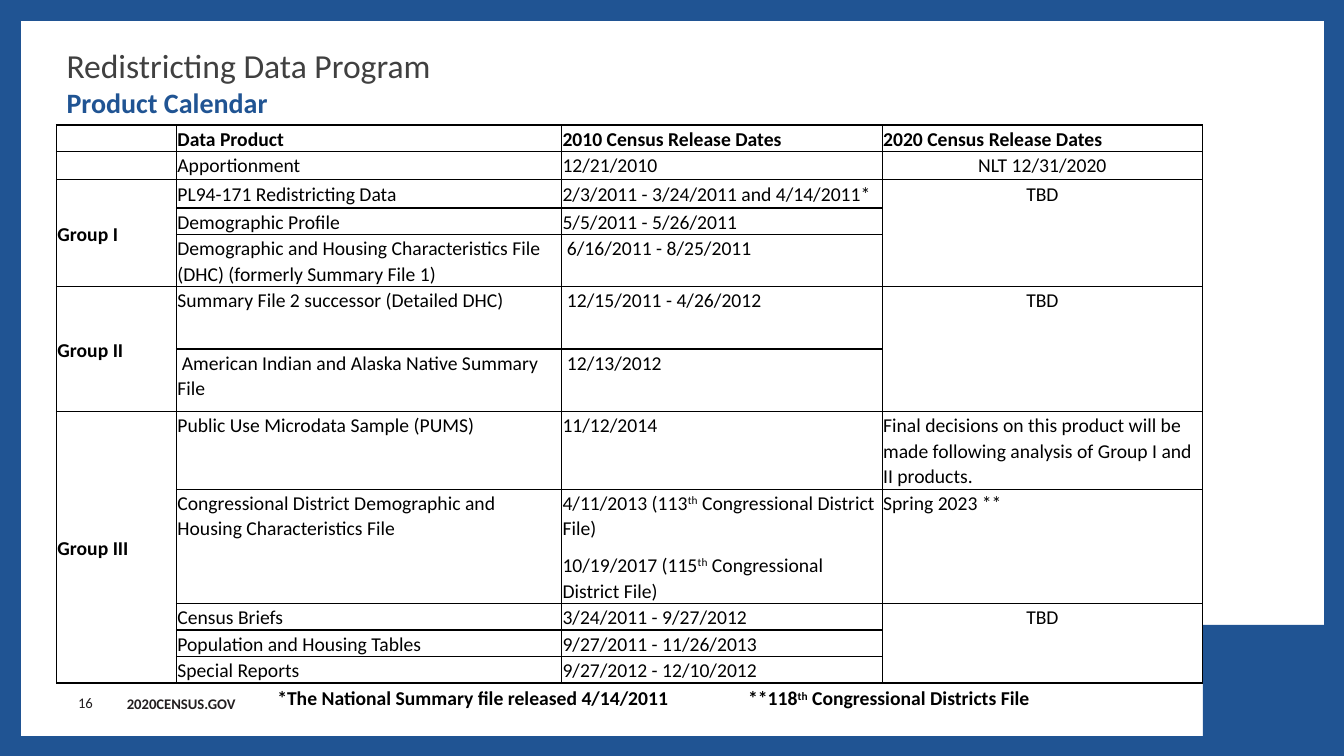
from typing import NamedTuple, Optional

from lxml.etree import SubElement
from pptx import Presentation
from pptx.dml.color import RGBColor
from pptx.enum.shapes import MSO_SHAPE
from pptx.enum.text import MSO_ANCHOR as ANCHOR, MSO_AUTO_SIZE as AUTO, PP_ALIGN as ALIGN
from pptx.oxml.ns import qn
from pptx.util import Inches, Pt

BLUE = RGBColor(0x20, 0x54, 0x93)
WHITE = RGBColor(0xFF, 0xFF, 0xFF)
BLACK = RGBColor(0, 0, 0)
GRAY = RGBColor(0x40, 0x40, 0x40)
INK = RGBColor(0x23, 0x1F, 0x20)
FONT = "Calibri"


class Block(NamedTuple):
    left: float
    top: float
    width: float
    height: float
    color: RGBColor


class Label(NamedTuple):
    text: str
    left: float
    top: float
    width: float
    height: float
    size: float
    color: RGBColor
    bold: bool = False
    wrap: bool = True
    align: ALIGN = ALIGN.LEFT
    anchor: ANCHOR = ANCHOR.TOP
    inset_left: float = 0.1
    inset_top: float = 0.05
    tab: float = 0


class Row(NamedTuple):
    """A table row; None continues the cell above."""
    height: float
    group: Optional[str]
    product: str
    dates_2010: str
    dates_2020: Optional[str]


BLOCKS = [Block(0.21, 0.21, 12.92, 7.09, WHITE), Block(11.93, 6.2, 1.4, 1.3, BLUE)]

# Text between carets is superscript
LABELS = [
    Label("2020CENSUS.GOV", 1.16, 6.84, 1.31, 0.28, 10.5, INK, bold=True, wrap=False),
    Label("16", 0.35, 6.77, 0.67, 0.4, 10.5, INK, align=ALIGN.RIGHT, anchor=ANCHOR.MIDDLE),
    Label("*The National Summary file released 4/14/2011\t**118^th^ Congressional Districts File",
          2.59, 6.71, 7.92, 0.4, 14, BLACK, bold=True, inset_left=0.16, inset_top=0.1, tab=4.67),
]

COLUMNS = [1.19, 3.82, 3.18, 3.18]
ROWS = [
    Row(0.24, "", "Data Product", "2010 Census Release Dates", "2020 Census Release Dates"),
    Row(0.28, "", "Apportionment", "12/21/2010", "NLT 12/31/2020"),
    Row(0.28, "Group I", "PL94-171 Redistricting Data",
        "2/3/2011 - 3/24/2011 and 4/14/2011*", "TBD"),
    Row(0.24, None, "Demographic Profile", "5/5/2011 - 5/26/2011", None),
    Row(0.47, None,
        "Demographic and Housing Characteristics File (DHC) (formerly Summary File 1)",
        " 6/16/2011 - 8/25/2011", None),
    Row(0.62, "Group II", "Summary File 2 successor (Detailed DHC)",
        " 12/15/2011 - 4/26/2012", "TBD"),
    Row(0.62, None, " American Indian and Alaska Native Summary File", " 12/13/2012", None),
    Row(0.7, "Group III", "Public Use Microdata Sample (PUMS)", "11/12/2014",
        "Final decisions on this product will be made following analysis of "
        "Group I and II products."),
    Row(1.04, None, "Congressional District Demographic and Housing Characteristics File",
        "4/11/2013 (113^th^ Congressional District File)\n"
        "10/19/2017 (115^th^ Congressional District File)", "Spring 2023 **"),
    Row(0.24, None, "Census Briefs", "3/24/2011 - 9/27/2012", "TBD"),
    Row(0.24, None, "Population and Housing Tables", "9/27/2011 - 11/26/2013", None),
    Row(0.24, None, "Special Reports", "9/27/2012 - 12/10/2012", None),
]


def set_attrs(target, **values) -> None:
    for name, value in values.items():
        setattr(target, name, value)


def add_run(p, text: str, size: float, color: RGBColor, bold: bool = False):
    r = p.add_run()
    r.text = text
    set_attrs(r.font, name=FONT, size=Pt(size), bold=bold)
    r.font.color.rgb = color
    return r


def add_runs(p, text: str, size: float, color: RGBColor, bold: bool = False) -> None:
    for i, part in enumerate(text.split("^")):
        r = add_run(p, part, size, color, bold)
        if i % 2:
            r._r.get_or_add_rPr().set("baseline", "30000")


def add_block(s, block: Block) -> None:
    box = map(Inches, block[:4])
    sp = s.shapes.add_shape(MSO_SHAPE.RECTANGLE, *box)
    sp.shadow.inherit = False
    sp.fill.solid()
    sp.fill.fore_color.rgb = block.color
    sp.line.fill.background()


def add_label(s, label: Label) -> None:
    box = map(Inches, label[1:5])
    tf = s.shapes.add_textbox(*box).text_frame
    set_attrs(tf, word_wrap=label.wrap, vertical_anchor=label.anchor,
              margin_left=Inches(label.inset_left), margin_top=Inches(label.inset_top))
    p = tf.paragraphs[0]
    p.alignment = label.align
    if label.tab:
        tabs = SubElement(p._p.get_or_add_pPr(), qn("a:tabLst"))
        SubElement(tabs, qn("a:tab"), pos=str(Inches(label.tab)), algn="l")
    add_runs(p, label.text, label.size, label.color, label.bold)


def format_cell(cell) -> None:
    set_attrs(cell, margin_left=Inches(0.01), margin_right=Inches(0.01),
              margin_top=Inches(0.01), margin_bottom=0)
    for side in ("lnL", "lnR", "lnT", "lnB"):
        ln = SubElement(cell._tc.get_or_add_tcPr(), qn(f"a:{side}"), w=str(Pt(1)))
        fill = SubElement(ln, qn("a:solidFill"))
        SubElement(fill, qn("a:srgbClr"), val=str(BLACK))
    cell.fill.solid()
    cell.fill.fore_color.rgb = WHITE


def fill_cell(cell, text: str, bold: bool, align: ALIGN) -> None:
    tf = cell.text_frame
    for i, line in enumerate(text.split("\n")):
        p = tf.add_paragraph() if i else tf.paragraphs[0]
        set_attrs(p, alignment=align, line_spacing=1.07, space_after=Pt(8))
        if line:
            add_runs(p, line, 14, BLACK, bold)
        else:
            SubElement(p._p, qn("a:endParaRPr"), sz="1400")


def add_calendar(s) -> None:
    frame = s.shapes.add_table(len(ROWS), len(COLUMNS), Inches(0.56), Inches(1.24),
                               Inches(sum(COLUMNS)), Inches(sum(r.height for r in ROWS)))
    table = frame.table
    set_attrs(table, first_row=False, horz_banding=False)
    for column, width in zip(table.columns, COLUMNS):
        column.width = Inches(width)
    for i, row in enumerate(ROWS):
        table.rows[i].height = Inches(row.height)
        for j, text in enumerate(row[1:]):
            cell = table.cell(i, j)
            format_cell(cell)
            centered = j == 3 and (text or "").startswith(("TBD", "NLT"))
            fill_cell(cell, text or "", i == 0 or j == 0,
                      ALIGN.CENTER if centered else ALIGN.LEFT)
            if j == 0 or (i == 0 and j > 1):
                cell.vertical_anchor = ANCHOR.MIDDLE
    # Merge each cell with its continuations below
    for j in range(len(COLUMNS)):
        starts = [i for i, row in enumerate(ROWS) if row[j + 1] is not None]
        for start, after in zip(starts, starts[1:] + [len(ROWS)]):
            if after - start > 1:
                table.cell(start, j).merge(table.cell(after - 1, j))


def add_title(s) -> None:
    title = s.shapes.title
    set_attrs(title, left=Inches(0.56), top=Inches(0.4), width=Inches(6.27), height=Inches(0.84))
    tf = title.text_frame
    set_attrs(tf, auto_size=AUTO.NONE, vertical_anchor=ANCHOR.TOP, word_wrap=True)
    p = tf.paragraphs[0]
    p.alignment = ALIGN.LEFT
    add_run(p, "Redistricting Data Program", 24, GRAY)
    p.add_line_break()
    add_run(p, "Product Calendar", 20, BLUE, bold=True)
    # Bring the title in front of the white panel
    s.shapes._spTree.append(title._element)


def main() -> None:
    prs = Presentation()
    set_attrs(prs, slide_width=Inches(13.33), slide_height=Inches(7.5))
    s = prs.slides.add_slide(prs.slide_layouts[5])
    s.background.fill.solid()
    s.background.fill.fore_color.rgb = BLUE
    for block in BLOCKS:
        add_block(s, block)
    add_title(s)
    add_calendar(s)
    for label in LABELS:
        add_label(s, label)
    prs.save("out.pptx")


if __name__ == "__main__":
    main()
